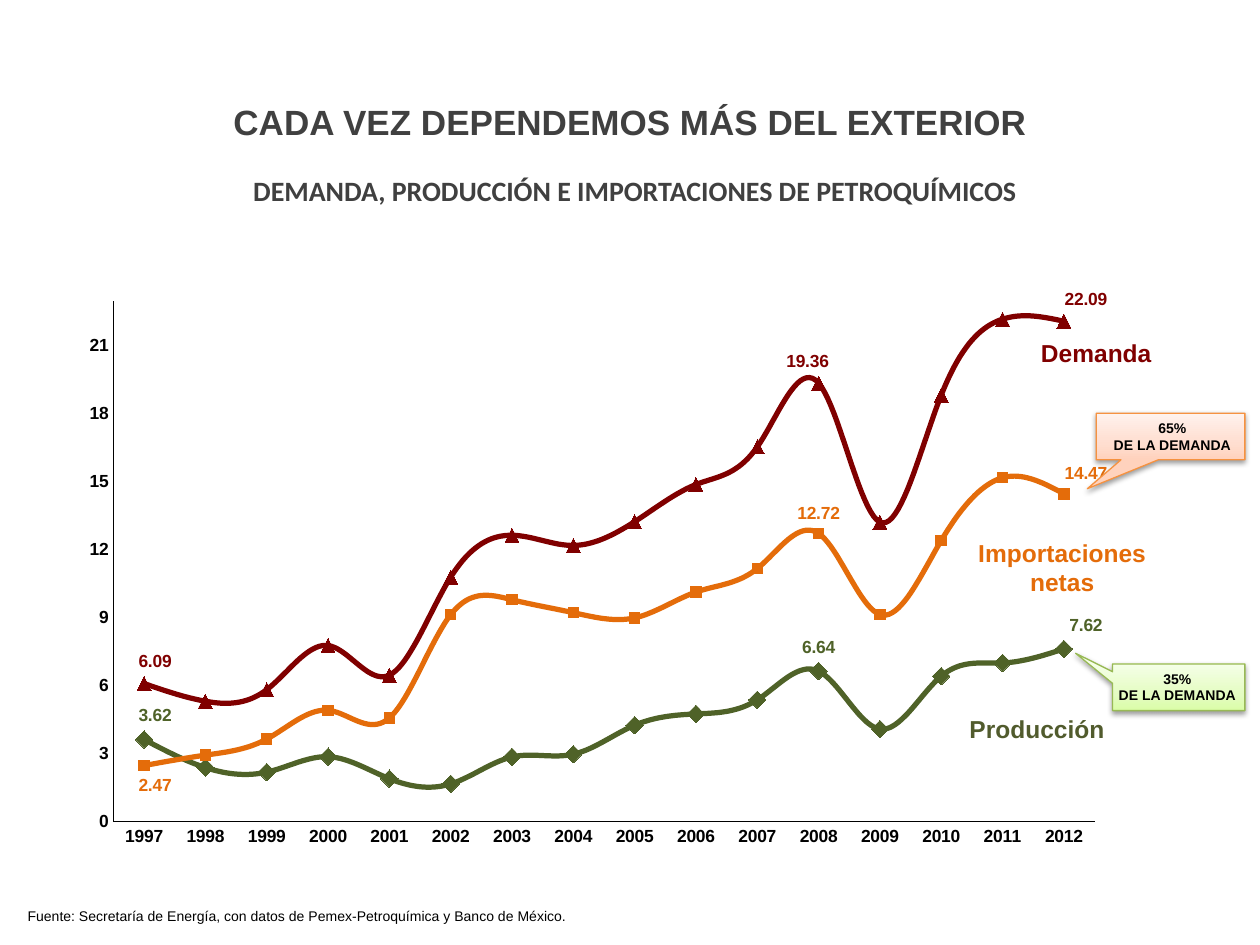
from dataclasses import dataclass

from lxml import etree
from pptx import Presentation
from pptx import util as u
from pptx.chart.data import CategoryChartData
from pptx.dml.color import RGBColor
from pptx.enum import chart as charts, shapes, text
from pptx.oxml.ns import qn


@dataclass(frozen=True)
class Theme:
    font: str = "Arial"
    subtitle_font: str = "Calibri"
    black: str = "000000"
    heading: str = "404040"
    production: str = "4F6228"
    production_name: str = "515B2D"
    imports: str = "E46C0A"
    demand: str = "800000"
    orange_line: str = "F69240"
    orange_stops: tuple = ((0, "FFD2BD"), (35, "FFDED0"), (100, "FFF2ED"))
    green_line: str = "98B955"
    green_stops: tuple = ((0, "DAFDA7"), (35, "E4FCC2"), (100, "F5FFE7"))
    title_size: int = 20
    subtitle_size: int = 16
    name_size: int = 14
    chart_size: int = 10
    small_size: int = 8


THEME = Theme()
PRODUCTION = (3.62, 2.38, 2.18, 2.86, 1.89, 1.66, 2.85, 2.97,
              4.25, 4.75, 5.37, 6.64, 4.08, 6.42, 7.0, 7.62)
IMPORTS = (2.47, 2.93, 3.64, 4.91, 4.57, 9.13, 9.79, 9.22,
           8.99, 10.13, 11.17, 12.72, 9.14, 12.41, 15.18, 14.47)
DEMAND = (6.09, 5.31, 5.82, 7.77, 6.46, 10.79, 12.64, 12.19,
          13.24, 14.88, 16.54, 19.36, 13.22, 18.83, 22.18, 22.09)
MARKER = charts.XL_MARKER_STYLE
SERIES = (
    ("Producción", PRODUCTION, THEME.production, MARKER.DIAMOND, 10, {0: 0.01, 11: 0, 15: 0.02}),
    ("Importaciones netas", IMPORTS, THEME.imports, MARKER.SQUARE, 6, {0: 0.01, 11: 0, 15: 0.02}),
    ("Demanda", DEMAND, THEME.demand, MARKER.TRIANGLE, 8, {0: 0.01, 11: -0.01, 15: 0.02}),
)


def rgb(color):
    return RGBColor.from_string(color)


def child(parent, tag, **attributes):
    element = etree.SubElement(parent, qn(tag))
    for name, value in attributes.items():
        element.set(name, str(value))
    return element


def style_font(font, size, color, name=THEME.font, bold=True):
    font.name = name
    font.size = u.Pt(size)
    font.bold = bold
    font.color.rgb = rgb(color)


def add_text(slide, box, content, size, color, name=THEME.font, bold=True, centred=True):
    frame = slide.shapes.add_textbox(*map(u.Inches, box)).text_frame
    frame.word_wrap = True
    frame.text = content
    for paragraph in frame.paragraphs:
        paragraph.alignment = text.PP_ALIGN.CENTER if centred else text.PP_ALIGN.LEFT
        for run in paragraph.runs:
            style_font(run.font, size, color, name, bold)


def manual_layout(**values):
    layout = etree.Element(qn("c:layout"))
    manual = child(layout, "c:manualLayout")
    for name, value in values.items():
        child(manual, f"c:{name}", val=value)
    return layout


def style_axis(axis):
    axis.has_major_gridlines = False
    axis.major_tick_mark = charts.XL_TICK_MARK.NONE
    axis.minor_tick_mark = charts.XL_TICK_MARK.NONE
    axis.format.line.color.rgb = rgb(THEME.black)
    axis.format.line.width = u.Pt(0.75)
    style_font(axis.tick_labels.font, THEME.chart_size, THEME.black)


def style_series(series, color, marker, marker_size, label_shifts):
    series.smooth = True
    series.format.line.color.rgb = rgb(color)
    series.format.line.width = u.Pt(3)
    series.marker.style = marker
    series.marker.size = marker_size
    series.marker.format.fill.solid()
    series.marker.format.fill.fore_color.rgb = rgb(color)
    series.marker.format.line.color.rgb = rgb(color)
    series.data_labels.show_value = False
    position = charts.XL_LABEL_POSITION
    for index, shift in label_shifts.items():
        label = series.points[index].data_label
        style_font(label.font, THEME.chart_size, color)
        below = color == THEME.imports and index == 0
        label.position = position.BELOW if below else position.ABOVE
    for element in series.data_labels._element.findall(qn("c:dLbl")):
        index = int(element.find(qn("c:idx")).get("val"))
        element.insert(1, manual_layout(x=label_shifts[index], y=0))


def add_line_chart(slide, box):
    data = CategoryChartData(number_format="0.00")
    data.categories = [str(year) for year in range(1997, 2013)]
    for name, values, *_ in SERIES:
        data.add_series(name, values)
    chart = slide.shapes.add_chart(
        charts.XL_CHART_TYPE.LINE_MARKERS, *map(u.Inches, box), data).chart
    chart.has_title = False
    chart.has_legend = False
    style_font(chart.font, THEME.chart_size, THEME.black)
    chart.plots[0].vary_by_categories = False
    style_axis(chart.category_axis)
    value_axis = chart.value_axis
    style_axis(value_axis)
    value_axis.minimum_scale = 0
    value_axis.maximum_scale = 23
    value_axis.major_unit = 3
    value_axis.tick_labels.number_format = "#,##0"
    value_axis.tick_labels.number_format_is_linked = False
    for series, (_, _, *style) in zip(chart.plots[0].series, SERIES):
        style_series(series, *style)
    plot_area = chart._chartSpace.find(f".//{qn('c:plotArea')}")
    for layout in plot_area.findall(qn("c:layout")):
        plot_area.remove(layout)
    plot_area.insert(0, manual_layout(layoutTarget="inner", xMode="edge", yMode="edge",
                                      x=0.103, y=0.023, w=0.891, h=0.895))


def add_callout(slide, box, tip, stops, line_color, text_box, content):
    shape = slide.shapes.add_shape(
        shapes.MSO_SHAPE.RECTANGULAR_CALLOUT, *map(u.Inches, box))
    shape.adjustments[0], shape.adjustments[1] = tip
    shape.line.color.rgb = rgb(line_color)
    shape.line.width = u.Pt(0.75)
    shape.shadow.inherit = False
    properties = shape._element.spPr
    gradient = etree.Element(qn("a:gradFill"), rotWithShape="1")
    stop_list = child(gradient, "a:gsLst")
    for percent, color in stops:
        stop = child(stop_list, "a:gs", pos=percent * 1000)
        child(stop, "a:srgbClr", val=color)
    child(gradient, "a:lin", ang=270 * 60000, scaled=1)
    properties.find(qn("a:prstGeom")).addnext(gradient)
    shadow = child(properties.find(qn("a:effectLst")), "a:outerShdw", blurRad=u.Pt(3.1),
                   dist=u.Pt(1.6), dir=90 * 60000, rotWithShape=0)
    child(child(shadow, "a:srgbClr", val=THEME.black), "a:alpha", val=38000)
    add_text(slide, text_box, content, THEME.small_size, THEME.black)


def add_headings(slide, left, top, width):
    add_text(slide, (left + 0.08, top, width - 0.24, 0.56),
             "CADA VEZ DEPENDEMOS MÁS DEL EXTERIOR", THEME.title_size, THEME.heading)
    add_text(slide, (left, top + 0.58, width, 0.37),
             "DEMANDA, PRODUCCIÓN E IMPORTACIONES DE PETROQUÍMICOS",
             THEME.subtitle_size, THEME.heading, name=THEME.subtitle_font)


def add_series_names(slide):
    for box, name, color in (
        ((7.52, 4.22, 1.82, 0.57), "Importaciones netas", THEME.imports),
        ((7.52, 5.62, 1.42, 0.34), "Producción", THEME.production_name),
        ((7.99, 2.63, 1.42, 0.34), "Demanda", THEME.demand),
    ):
        add_text(slide, box, name, THEME.name_size, color)


def main():
    presentation = Presentation()
    presentation.slide_width = u.Inches(10)
    presentation.slide_height = u.Inches(7.5)
    slide = presentation.slides.add_slide(presentation.slide_layouts[6])
    add_line_chart(slide, (0, 2.28, 8.79, 4.62))
    add_text(slide, (0.12, 7.15, 9.88, 0.24),
             "Fuente: Secretaría de Energía, con datos de Pemex-Petroquímica y Banco de México.",
             THEME.small_size, THEME.black, bold=False, centred=False)
    add_series_names(slide)
    add_callout(slide, (8.7, 3.28, 1.18, 0.37), (-0.56, 1.12), THEME.orange_stops,
                THEME.orange_line, (8.67, 3.28, 1.27, 0.37), "65%\nDE LA DEMANDA")
    add_callout(slide, (8.83, 5.27, 1.05, 0.37), (-0.78, -0.73), THEME.green_stops,
                THEME.green_line, (8.78, 5.27, 1.13, 0.37), "35%\nDE LA DEMANDA")
    add_headings(slide, 1.14, 0.75, 7.8)
    presentation.save("out.pptx")


if __name__ == "__main__":
    main()
